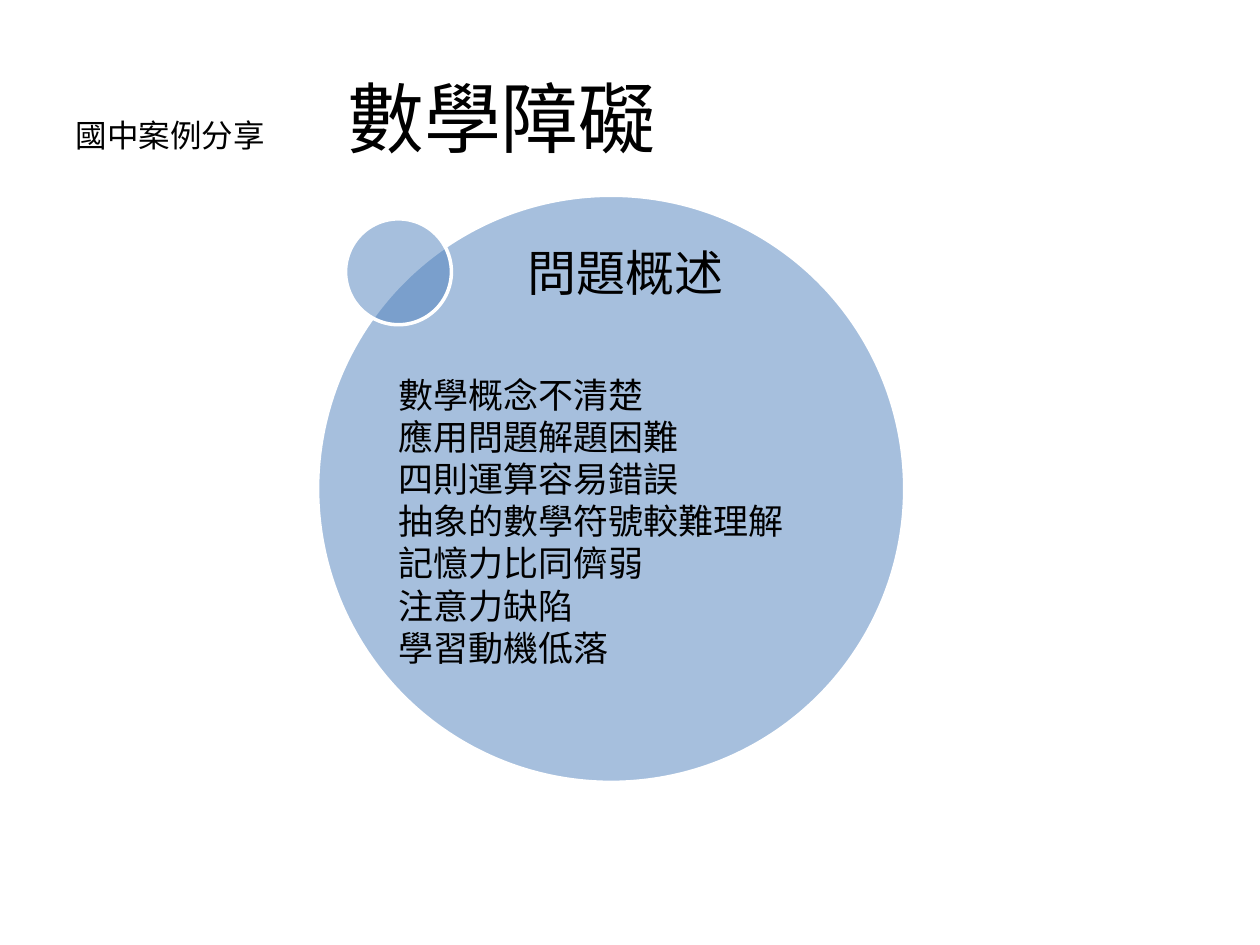
from lxml import etree
from pptx import Presentation
from pptx.dml.color import RGBColor
from pptx.enum import shapes, text
from pptx.oxml import ns
from pptx.util import Pt

COLORS = {"text": "000000", "circle": "4F81BD", "outline": "FFFFFF"}
CJK_FONT = "Noto Sans CJK SC"
LATIN_FONT = "Calibri"
SYMPTOMS = [
    "數學概念不清楚",
    "應用問題解題困難",
    "四則運算容易錯誤",
    "抽象的數學符號較難理解",
    "記憶力比同儕弱",
    "注意力缺陷",
    "學習動機低落",
]


def rgb(name):
    return RGBColor.from_string(COLORS[name])


def style_run(run, size, latin=CJK_FONT):
    run.font.size = Pt(size)
    run.font.name = latin
    run.font.color.rgb = rgb("text")
    east_asian = etree.SubElement(run.font._element, ns.qn("a:ea"))
    east_asian.set("typeface", CJK_FONT)


def add_title(slide, left, top, width, height):
    title = slide.shapes.title
    title.left, title.top, title.width, title.height = (
        Pt(left), Pt(top), Pt(width), Pt(height))
    title.text_frame.vertical_anchor = text.MSO_ANCHOR.MIDDLE
    heading = title.text_frame.paragraphs[0]
    heading.alignment = text.PP_ALIGN.LEFT
    # A tab stop separates the section label from the topic
    properties = heading._p.get_or_add_pPr()
    stops = etree.SubElement(properties, ns.qn("a:tabLst"))
    etree.SubElement(stops, ns.qn("a:tab"), pos=str(Pt(155.5)), algn="l")
    for words, size in (("國中案例分享\t", 18), ("數學障礙", 44)):
        run = heading.add_run()
        run.text = words
        style_run(run, size)


def add_circle(slide, left, top, diameter):
    circle = slide.shapes.add_shape(
        shapes.MSO_SHAPE.OVAL, Pt(left), Pt(top), Pt(diameter), Pt(diameter))
    circle.shadow.inherit = False
    circle.fill.solid()
    circle.fill.fore_color.rgb = rgb("circle")
    color = circle._element.spPr.find(".//" + ns.qn("a:srgbClr"))
    etree.SubElement(color, ns.qn("a:alpha"), val="50000")
    circle.line.color.rgb = rgb("outline")
    circle.line.width = Pt(2)


def add_text(slide, left, top, width, height, lines, size, latin, margin):
    box = slide.shapes.add_textbox(Pt(left), Pt(top), Pt(width), Pt(height))
    frame = box.text_frame
    frame.word_wrap = True
    frame.vertical_anchor = text.MSO_ANCHOR.MIDDLE
    frame.margin_left = frame.margin_right = 0
    frame.margin_top = frame.margin_bottom = Pt(margin)
    frame.text = "\n".join(lines)
    for paragraph in frame.paragraphs:
        style_run(paragraph.runs[0], size, latin)
    return frame


def add_overview(slide, left, top, diameter):
    # Large circle with a small one on its upper left edge
    add_circle(slide, left, top, diameter)
    add_circle(slide, left + 16, top + 13.5, 60.5)

    # Heading
    heading = add_text(slide, left + 14.5, top + 13.5, 322.5, 60.5,
                       ["問題概述"], 28, CJK_FONT, 2.8)
    heading.paragraphs[0].alignment = text.PP_ALIGN.CENTER

    # Symptoms
    symptoms = add_text(slide, left + 46, top + 74, 322.5, 227,
                        SYMPTOMS, 20, LATIN_FONT, 2)
    for paragraph in symptoms.paragraphs:
        paragraph.line_spacing = 0.9
        paragraph.space_after = Pt(2.5)


def main():
    deck = Presentation()
    deck.slide_width, deck.slide_height = Pt(720), Pt(540)
    slide = deck.slides.add_slide(deck.slide_layouts[5])
    add_title(slide, 36, 21.6, 648, 90)
    add_overview(slide, 181.5, 111.6, 335.5)
    deck.save("out.pptx")


if __name__ == "__main__":
    main()
